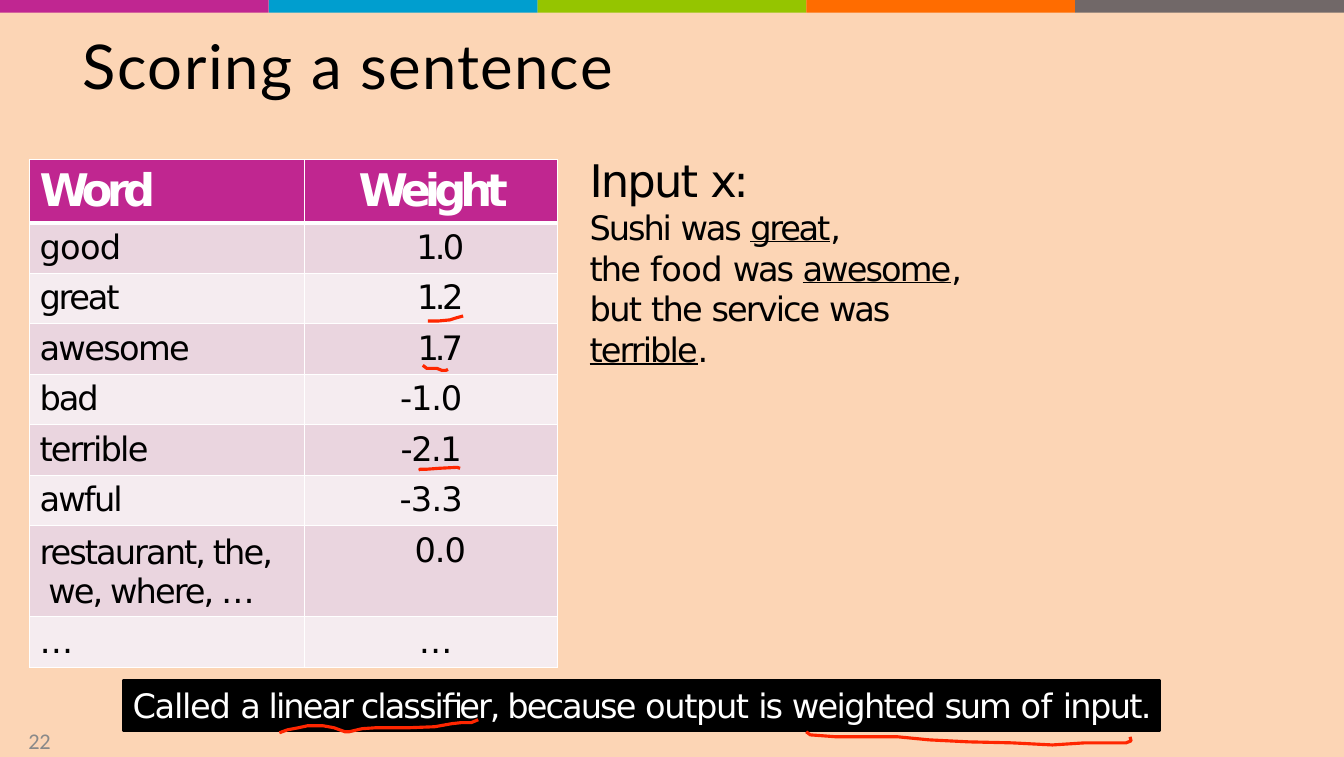
from lxml.etree import SubElement
from pptx import Presentation
from pptx.dml.color import RGBColor
from pptx.enum.shapes import MSO_SHAPE
from pptx.enum.text import MSO_ANCHOR, PP_ALIGN
from pptx.oxml.ns import qn
from pptx.util import Pt

PAGE_WIDTH, PAGE_HEIGHT = 959, 540
BAR_COLORS = ["C02691", "009ECF", "95C500", "FF6C00", "716868"]

# Word, its letter spacing, weight, its letter spacing, weight's left margin
WEIGHT_ROWS = [
    ("good", -0.5, "1.0", -2, 13.7),
    ("great", -1.6, "1.2", -2.5, 13.7),
    ("awesome", -1.2, "1.7", -2.9, 13.7),
    ("bad", -1.5, "-1.0", -0.8, 0.7),
    ("terrible", -1.3, "-2.1", -1.1, 0.7),
    ("awful", -1.3, "-3.3", -0.6, 0.7),
    ("restaurant, the,\n we, where, …", -1.4, "0.0", -0.8, 13.7),
    ("…", 0, "…", 0, 7.2),
]

# Text, letter spacing, underline
SUSHI_SPANS = [
    ("Sushi ", -1.5, False), ("was ", -1.6, False), ("great", -1.6, True),
    (",", -1.6, False),
]
FOOD_SPANS = [
    ("the ", -1.3, False), ("food ", -0.4, False), ("was ", -1.6, False),
    ("awesome", -1.4, True), (",\n", -1.4, False), ("but ", -1.2, False),
    ("the ", -1.3, False), ("service ", -1.4, False), ("was\n", -1.6, False),
    ("terrible", -1.4, True), (".", -1.4, False),
]

CLASSIFIER_SPANS = [
    ("Called ", -0.9), ("a ", -2.2), ("linear classifier, because ", -1.4),
    ("output ", -1), ("is ", -1.5), ("weighted ", -1.2), ("sum ", -1.5),
    ("of ", -0.3), ("input.", -1.2),
]

GREAT_AND_AWESOME_MARKS = [
    [(305.3, 229), (312.5, 229), (321.1, 228.2), (325.4, 226.8), (330.5, 225.4)],
    [(301.7, 260.6), (304.6, 262.8), (311.8, 262.8), (315.4, 264.2),
     (318.2, 264.2), (319.7, 263.5)],
]
TERRIBLE_MARK = [
    [(300.2, 335.5), (299.5, 334.8), (303.8, 334.8), (313.2, 334.1),
     (326.2, 333.4), (328.3, 334.1)],
]
CLASSIFIER_MARKS = [
    [(199.4, 522.7), (205.2, 520.6), (213.1, 519.1), (219.6, 517.7),
     (230.4, 517.7), (238.3, 519.1), (246.2, 522), (249.1, 522),
     (258.5, 519.8), (268.6, 519.1), (292.3, 519.1), (310.3, 518.4),
     (322.6, 516.2), (329, 515.5), (336.2, 515.5), (341.3, 513.4)],
    [(575.3, 522), (578.2, 524.2), (587.5, 524.9), (596.9, 525.6),
     (640.8, 525.6), (663.1, 527.8), (691.2, 529.2), (722.2, 529.9),
     (751, 531.4), (774, 529.9), (803.5, 529.9), (807.1, 528.5), (806.4, 525.6)],
]


def color(code):
    return RGBColor.from_string(code)


def add_span(para, text, size=24, font="DejaVu Sans", fill="000000",
             spacing=0, bold=False, underline=False):
    """Add formatted text; a newline becomes a line break."""
    for index, line in enumerate(text.split("\n")):
        if index:
            para.add_line_break()
        if not line:
            continue
        span = para.add_run()
        span.text = line
        span.font.size = Pt(size)
        span.font.name = font
        span.font.bold = bold
        span.font.underline = underline
        span.font.color.rgb = color(fill)
        span.font._element.set("spc", str(round(spacing * 100)))


def add_border(cell, side, position, width):
    properties = cell._tc.get_or_add_tcPr()
    line = SubElement(properties, qn(f"a:ln{side}"), w=str(int(Pt(width))))
    fill = SubElement(line, qn("a:solidFill"))
    SubElement(fill, qn("a:srgbClr"), val="FFFFFF")
    properties.insert(position, line)


class SlideBuilder:
    ink = "FF2600"

    def __init__(self, page):
        self.page = page

    def rectangle(self, left, top, width, height, fill):
        box = self.page.shapes.add_shape(
            MSO_SHAPE.RECTANGLE, Pt(left), Pt(top), Pt(width), Pt(height))
        box.shadow.inherit = False
        box.fill.solid()
        box.fill.fore_color.rgb = color(fill)
        box.line.fill.background()
        return box

    def text_box(self, left, top, width, height):
        box = self.page.shapes.add_textbox(Pt(left), Pt(top), Pt(width), Pt(height))
        return self.frame(box)

    def frame(self, box, left=0.7, top=0.7, space_before=0.9):
        """Prepare the text area of a box and return it."""
        frame = box.text_frame
        frame.word_wrap = True
        frame.vertical_anchor = MSO_ANCHOR.TOP
        frame.margin_left, frame.margin_top = Pt(left), Pt(top)
        frame.margin_right = frame.margin_bottom = 0
        frame.paragraphs[0].alignment = PP_ALIGN.LEFT
        frame.paragraphs[0].space_before = Pt(space_before)
        return frame

    def table(self, left, top, widths, heights):
        table = self.page.shapes.add_table(
            len(heights), len(widths), Pt(left), Pt(top),
            Pt(sum(widths)), Pt(sum(heights))).table
        table.first_row = table.horz_banding = False
        for column, width in zip(table.columns, widths):
            column.width = Pt(width)
        for row, height in zip(table.rows, heights):
            row.height = Pt(height)
        return table

    def cell(self, table, row, column, text, shade, margin=7.2, centered=False, **style):
        cell = table.cell(row, column)
        cell.margin_left, cell.margin_top = Pt(margin), Pt(3.6)
        cell.margin_right = cell.margin_bottom = 0
        cell.fill.solid()
        cell.fill.fore_color.rgb = color(shade)
        top, bottom = (3 if row == 1 else 1), (3 if row == 0 else 1)
        for position, (side, width) in enumerate(
                [("L", 1), ("R", 1), ("T", top), ("B", bottom)]):
            add_border(cell, side, position, width)
        para = cell.text_frame.paragraphs[0]
        para.alignment = PP_ALIGN.CENTER if centered else PP_ALIGN.LEFT
        para.space_before = Pt(3.5)
        if "\n" in text:
            cell.margin_top, para.space_before = Pt(5), Pt(5.2)
            para.line_spacing = Pt(28)
        add_span(para, text, **style)

    def pen_marks(self, strokes):
        lines = [[(Pt(x), Pt(y)) for x, y in stroke] for stroke in strokes]
        builder = self.page.shapes.build_freeform(*lines[0][0])
        for index, points in enumerate(lines):
            if index:
                builder.move_to(*points[0])
            builder.add_line_segments(points[1:], close=False)
        mark = builder.convert_to_shape()
        mark.shadow.inherit = False
        mark.fill.background()
        mark.line.color.rgb = color(self.ink)
        mark.line.width = Pt(2.25)


def main():
    deck = Presentation()
    deck.slide_width, deck.slide_height = Pt(PAGE_WIDTH), Pt(PAGE_HEIGHT)
    page = deck.slides.add_slide(deck.slide_layouts[6])
    page.background.fill.solid()
    page.background.fill.fore_color.rgb = color("FCD5B5")
    slide = SlideBuilder(page)

    bar_width = PAGE_WIDTH / len(BAR_COLORS)
    for index, fill in enumerate(BAR_COLORS):
        slide.rectangle(index * bar_width, 0, bar_width, 9, fill)

    title = slide.text_box(58.3, 19.4, 389, 54.7).paragraphs[0]
    for text, spacing in [("Scoring ", 1.1), ("a ", 0.7), ("sentence", 0.9)]:
        add_span(title, text, size=44, font="Lato", spacing=spacing)

    table = slide.table(21, 113.8, [196, 180.7], [45.2] + [36] * 6 + [65, 36])
    for column, (text, margin, spacing) in enumerate(
            [("Word", 7.2, -4.1), ("Weight", 38.9, -4.3)]):
        slide.cell(table, 0, column, text, "C02690", margin,
                   size=32, fill="FFFFFF", bold=True, spacing=spacing)
    for row, (word, word_spacing, weight, weight_spacing, margin) in enumerate(WEIGHT_ROWS, 1):
        shade = "EAD5DF" if row % 2 else "F5ECF0"
        slide.cell(table, row, 0, word, shade, spacing=word_spacing)
        slide.cell(table, row, 1, weight, shade, margin, True, spacing=weight_spacing)

    sentence = slide.text_box(420, 108.7, 301, 126.7)
    heading = sentence.paragraphs[0]
    heading.line_spacing = Pt(38.2)
    add_span(heading, "Input ", size=32, spacing=-1.4)
    add_span(heading, "x:", size=32, spacing=-2.4)
    for spans, line_spacing in [(SUSHI_SPANS, Pt(28.6)), (FOOD_SPANS, 1.01)]:
        para = sentence.add_paragraph()
        para.line_spacing = line_spacing
        for text, spacing, underline in spans:
            add_span(para, text, spacing=spacing, underline=underline)

    banner = slide.rectangle(87.8, 485.3, 740, 36, "000000")
    banner.line.color.rgb = color("000000")
    banner.line.width = Pt(2)
    summary = slide.frame(banner, 6.8, 3.6, space_before=4.5).paragraphs[0]
    for text, spacing in CLASSIFIER_SPANS:
        add_span(summary, text, fill="FFFFFF", spacing=spacing)

    for marks in (GREAT_AND_AWESOME_MARKS, TERRIBLE_MARK, CLASSIFIER_MARKS):
        slide.pen_marks(marks)

    number = slide.text_box(19.5, 518, 24, 21.6).paragraphs[0]
    add_span(number, "22", size=16, font="Calibri", fill="898989", spacing=-0.1)

    deck.save("out.pptx")


if __name__ == "__main__":
    main()
